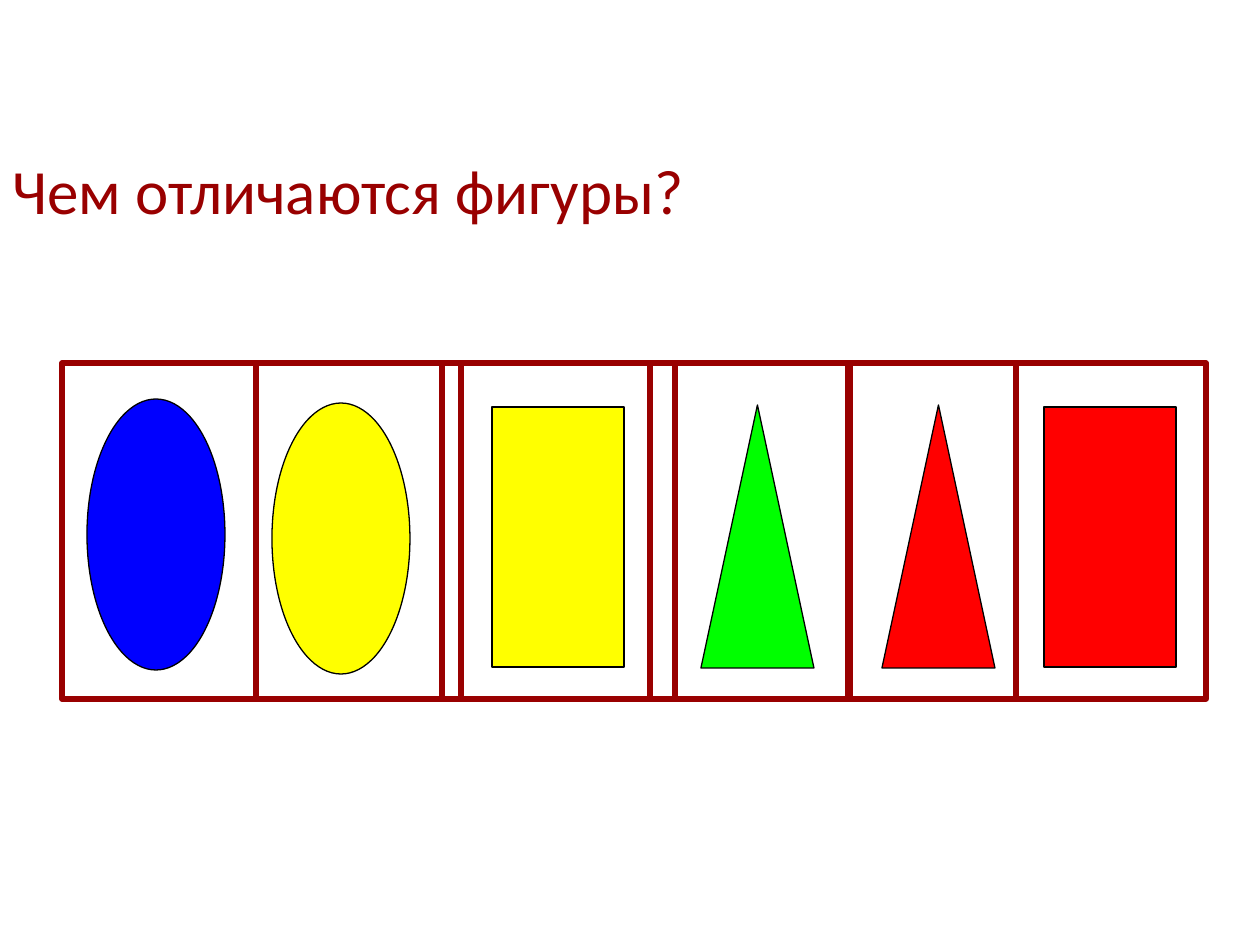
from dataclasses import dataclass
from typing import Optional

from pptx import Presentation
from pptx.dml.color import RGBColor
from pptx.enum.shapes import MSO_SHAPE
from pptx.enum.text import MSO_ANCHOR, MSO_AUTO_SIZE, PP_ALIGN
from pptx.util import Emu, Pt

OVAL = MSO_SHAPE.OVAL
RECT = MSO_SHAPE.RECTANGLE
CONE = MSO_SHAPE.ISOSCELES_TRIANGLE
PX = 914400 // 126

BLACK, MAROON = "000000", "990000"
YELLOW, GREEN, RED, BLUE = "FFFF00", "00FF00", "FF0000", "0000FF"


@dataclass
class Figure:
    kind: int
    left: int
    top: int
    width: int
    height: int
    fill: Optional[str] = None
    line: str = BLACK
    weight: float = 0.75


def px(count: int) -> Emu:
    return Emu(count * PX)


def color(code: str) -> RGBColor:
    return RGBColor.from_string(code)


def draw(slide, item: Figure) -> None:
    shape = slide.shapes.add_shape(
        item.kind, px(item.left), px(item.top), px(item.width), px(item.height))
    shape.shadow.inherit = False
    if item.fill:
        shape.fill.solid()
        shape.fill.fore_color.rgb = color(item.fill)
    else:
        shape.fill.background()
    shape.line.color.rgb = color(item.line)
    shape.line.width = Pt(item.weight)


def style(target, values: dict) -> None:
    for name, value in values.items():
        setattr(target, name, value)


def set_title(slide, text: str) -> None:
    title = slide.shapes.title
    style(title, {"left": 0, "top": px(145), "width": px(1260), "height": px(88)})
    frame = title.text_frame
    frame.text = text
    style(frame, {"word_wrap": True, "auto_size": MSO_AUTO_SIZE.NONE,
                  "vertical_anchor": MSO_ANCHOR.TOP})
    line = frame.paragraphs[0]
    line.alignment = PP_ALIGN.LEFT
    font = line.runs[0].font
    style(font, {"name": "Calibri", "size": Pt(36)})
    font.color.rgb = color(MAROON)


# Coloured figures: kind, left, top, width, height, fill
FIGURES = [
    Figure(OVAL, 272, 403, 138, 271, YELLOW),
    Figure(CONE, 701, 405, 113, 263, GREEN),
    Figure(CONE, 882, 405, 113, 263, RED),
    Figure(RECT, 1044, 407, 132, 260, RED),
    Figure(OVAL, 87, 399, 138, 271, BLUE),
    Figure(RECT, 492, 407, 132, 260, YELLOW),
]

# Overlapping frames around neighbours: left, width
FRAMES = [(62, 380), (256, 394), (461, 389), (675, 341), (848, 358)]


def main() -> None:
    deck = Presentation()
    style(deck, {"slide_width": px(1260), "slide_height": px(945)})
    slide = deck.slides.add_slide(deck.slide_layouts[5])
    for item in FIGURES:
        draw(slide, item)
    for left, width in FRAMES:
        draw(slide, Figure(RECT, left, 363, width, 336, line=MAROON, weight=3))
    set_title(slide, "Чем отличаются фигуры?")
    deck.save("out.pptx")


if __name__ == "__main__":
    main()
